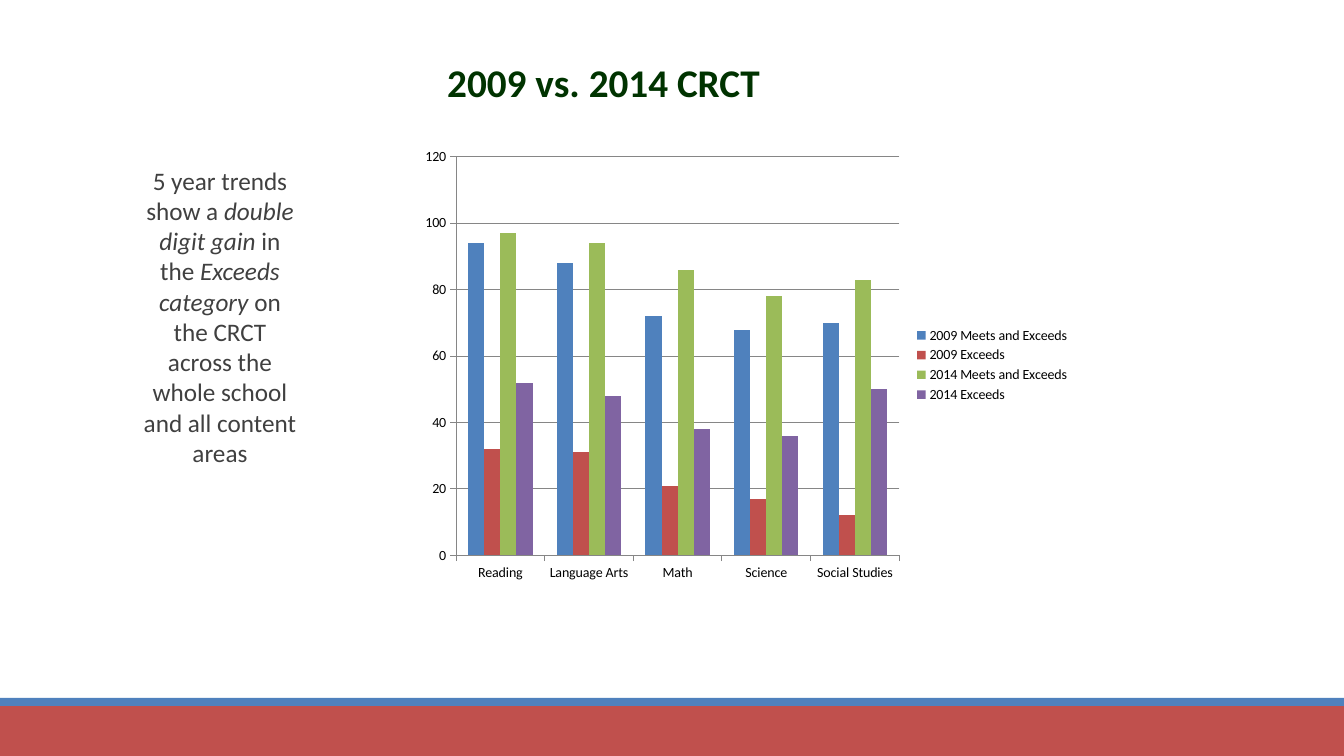
from dataclasses import dataclass

from lxml import etree
from pptx import Presentation
from pptx import util as u
from pptx.chart.data import CategoryChartData
from pptx.dml.color import RGBColor
from pptx.enum import chart as charts, shapes, text

EMU_PER_PX = 914400 / 100.8


@dataclass(frozen=True)
class Theme:
    font: str = "Calibri"
    blue: str = "4F81BD"
    red: str = "C0504D"
    green: str = "9BBB59"
    purple: str = "8064A2"
    title: str = "003300"
    body: str = "404040"
    label: str = "000000"
    grid: str = "868686"
    title_size: int = 28
    body_size: int = 18
    label_size: int = 10


@dataclass(frozen=True)
class Area:
    left: int
    top: int
    width: int
    height: int


@dataclass(frozen=True)
class Band:
    area: Area
    color: str


@dataclass(frozen=True)
class Series:
    name: str
    values: tuple[int, ...]
    color: str


THEME = Theme()
PAGE = Area(0, 0, 1344, 756)
TITLE_AREA = Area(427, 53, 353, 89)
NOTE_AREA = Area(130, 160, 180, 316)
CHART_AREA = Area(412, 140, 668, 450)

BANDS = (
    Band(Area(0, 706, PAGE.width, 50), THEME.red),
    Band(Area(0, 698, PAGE.width, 8), THEME.blue),
)
SUBJECTS = ("Reading", "Language Arts", "Math", "Science", "Social Studies")
RESULTS = (
    Series("2009 Meets and Exceeds", (94, 88, 72, 68, 70), THEME.blue),
    Series("2009 Exceeds", (32, 31, 21, 17, 12), THEME.red),
    Series("2014 Meets and Exceeds", (97, 94, 86, 78, 83), THEME.green),
    Series("2014 Exceeds", (52, 48, 38, 36, 50), THEME.purple),
)
# Text pieces, each with its italic flag
NOTE = (
    ("5 year trends show a ", False),
    ("double digit gain", True),
    (" in the ", False),
    ("Exceeds category", True),
    (" on the CRCT across the whole school and all content areas", False),
)


def px(length: int) -> int:
    return u.Emu(round(length * EMU_PER_PX))


def place(area: Area) -> tuple[int, ...]:
    return tuple(px(n) for n in (area.left, area.top, area.width, area.height))


def rgb(color: str) -> RGBColor:
    return RGBColor.from_string(color)


def style_font(font, *, size: int, color: str, bold: bool = False, italic: bool = False) -> None:
    font.name = THEME.font
    font.size = u.Pt(size)
    font.bold = bold
    font.italic = italic
    font.color.rgb = rgb(color)


def write_text(box, pieces, *, size: int, color: str, bold: bool = False) -> None:
    frame = box.text_frame
    frame.word_wrap = True
    frame.auto_size = text.MSO_AUTO_SIZE.NONE
    frame.vertical_anchor = text.MSO_ANCHOR.TOP
    para = frame.paragraphs[0]
    para.alignment = text.PP_ALIGN.CENTER
    for words, italic in pieces:
        span = para.add_run()
        span.text = words
        style_font(span.font, size=size, color=color, bold=bold, italic=italic)


def draw_band(page, band: Band) -> None:
    box = page.shapes.add_shape(shapes.MSO_SHAPE.RECTANGLE, *place(band.area))
    box.shadow.inherit = False
    box.fill.solid()
    box.fill.fore_color.rgb = rgb(band.color)
    box.line.fill.background()


def style_line(line) -> None:
    line.color.rgb = rgb(THEME.grid)
    line.width = u.Pt(0.75)


def draw_chart(page) -> None:
    data = CategoryChartData(number_format="General")
    data.categories = SUBJECTS
    for series in RESULTS:
        data.add_series(series.name, series.values)
    kind = charts.XL_CHART_TYPE.COLUMN_CLUSTERED
    chart = page.shapes.add_chart(kind, *place(CHART_AREA), data).chart
    chart.has_title = False
    style_font(chart.font, size=THEME.label_size, color=THEME.label)

    # Columns
    plot = chart.plots[0]
    plot.gap_width = 150
    plot.overlap = 0
    plot.vary_by_categories = False
    for column, series in zip(plot.series, RESULTS):
        column.invert_if_negative = False
        column.format.fill.solid()
        column.format.fill.fore_color.rgb = rgb(series.color)

    # Axes and grid
    for axis in (chart.category_axis, chart.value_axis):
        axis.major_tick_mark = charts.XL_TICK_MARK.OUTSIDE
        axis.minor_tick_mark = charts.XL_TICK_MARK.NONE
        style_line(axis.format.line)
    scale = chart.value_axis
    scale.minimum_scale, scale.maximum_scale, scale.major_unit = 0, 120, 20
    scale.has_major_gridlines = True
    style_line(scale.major_gridlines.format.line)

    # Legend
    chart.has_legend = True
    chart.legend.position = charts.XL_LEGEND_POSITION.RIGHT
    chart.legend.include_in_layout = False


def main() -> None:
    deck = Presentation()
    deck.slide_width, deck.slide_height = px(PAGE.width), px(PAGE.height)
    page = deck.slides.add_slide(deck.slide_layouts.get_by_name("Title Only"))

    # Footer bands
    for band in BANDS:
        draw_band(page, band)

    # Title
    title = page.shapes.title
    title.left, title.top, title.width, title.height = place(TITLE_AREA)
    write_text(title, (("2009 vs. 2014 CRCT", False),),
               size=THEME.title_size, color=THEME.title, bold=True)

    # Trend note and score chart
    note = page.shapes.add_textbox(*place(NOTE_AREA))
    write_text(note, NOTE, size=THEME.body_size, color=THEME.body)
    draw_chart(page)

    deck.save("out.pptx")


if __name__ == "__main__":
    main()
